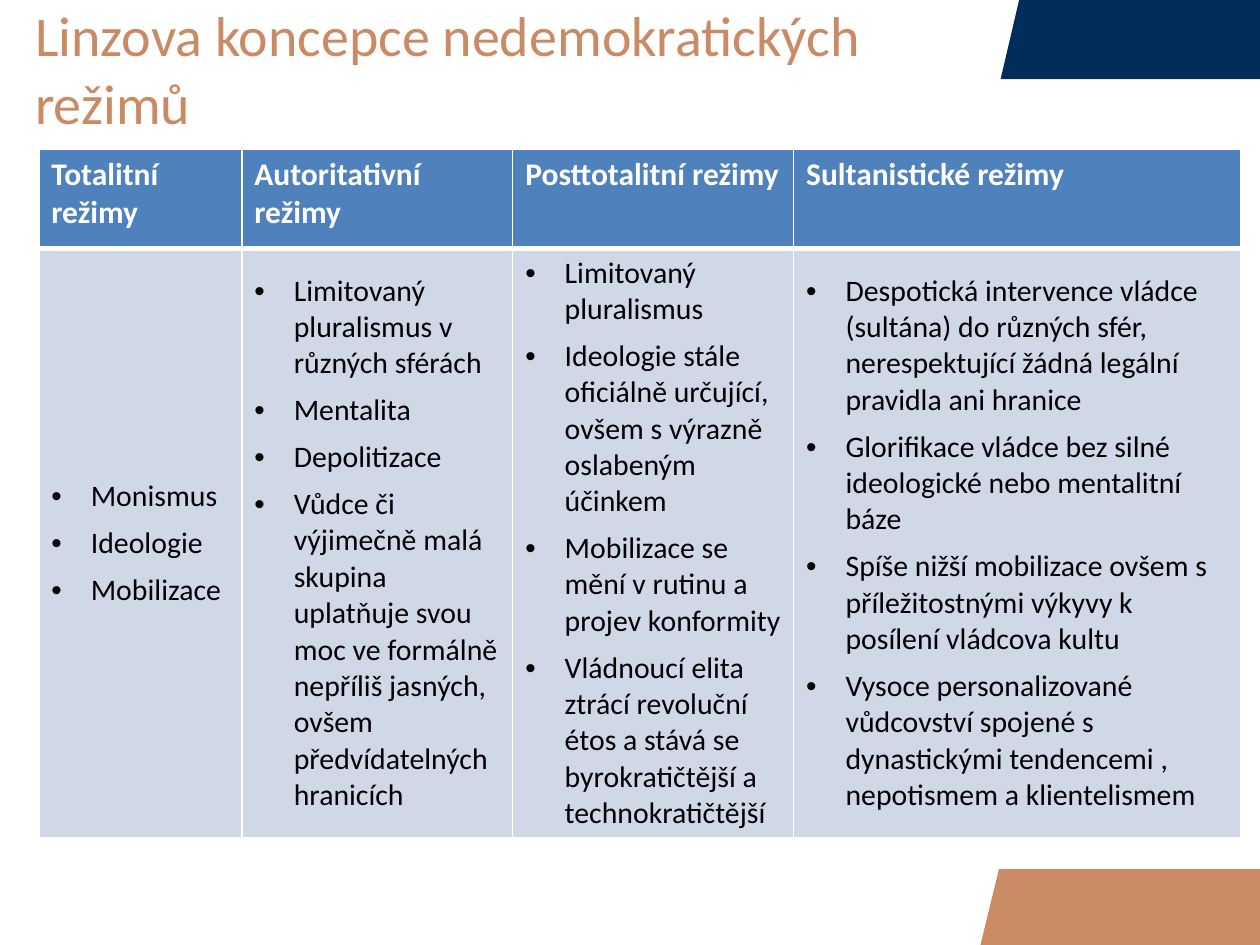
from lxml import etree
from pptx import Presentation
from pptx.dml.color import RGBColor
from pptx.enum.text import MSO_ANCHOR, PP_ALIGN
from pptx.oxml.ns import qn
from pptx.util import Pt

LEFT = PP_ALIGN.LEFT
TOP = MSO_ANCHOR.TOP
MIDDLE = MSO_ANCHOR.MIDDLE
FONT = "Calibri"
TITLE_ONLY = 5
COLORS = {
    "navy": "002D5A",
    "copper": "CA8A64",
    "header": "4F81BD",
    "body": "D0D8E8",
    "white": "FFFFFF",
    "black": "000000",
}
WIDTH, HEIGHT = 720, 540
COLUMN_WIDTHS = [116, 154.8, 160.5, 255.6]
ROW_HEIGHTS = [56.7, 333.7]
BULLET_INDENT = 22.5
REGIMES = {
    "Totalitní režimy": ["Monismus", "Ideologie", "Mobilizace"],
    "Autoritativní režimy": [
        "Limitovaný pluralismus v různých sférách",
        "Mentalita",
        "Depolitizace",
        "Vůdce či výjimečně malá skupina uplatňuje svou moc ve formálně "
        "nepříliš jasných, ovšem předvídatelných hranicích",
    ],
    "Posttotalitní režimy": [
        "Limitovaný pluralismus",
        "Ideologie stále oficiálně určující, ovšem s výrazně oslabeným účinkem",
        "Mobilizace se mění v rutinu a projev konformity",
        "Vládnoucí elita ztrácí revoluční étos a stává se byrokratičtější "
        "a technokratičtější",
    ],
    "Sultanistické režimy": [
        "Despotická intervence vládce (sultána) do různých sfér, "
        "nerespektující žádná legální pravidla ani hranice",
        "Glorifikace vládce bez silné ideologické nebo mentalitní báze",
        "Spíše nižší mobilizace ovšem s příležitostnými výkyvy k posílení "
        "vládcova kultu",
        "Vysoce personalizované vůdcovství spojené s dynastickými tendencemi , "
        "nepotismem a klientelismem",
    ],
}


def color(name):
    return RGBColor.from_string(COLORS[name])


def format_font(paragraph, size, color_name, bold=False):
    font = paragraph.font
    font.name = FONT
    font.size = Pt(size)
    font.bold = bold
    font.color.rgb = color(color_name)


def add_corner(slide, left, top, height, slant, color_name):
    bottom = top + height
    builder = slide.shapes.build_freeform(Pt(left), Pt(bottom))
    points = [(left + slant, top), (WIDTH, top), (WIDTH, bottom)]
    builder.add_line_segments([(Pt(x), Pt(y)) for x, y in points])
    shape = builder.convert_to_shape()
    shape.shadow.inherit = False
    shape.fill.solid()
    shape.fill.fore_color.rgb = color(color_name)
    shape.line.fill.background()


def set_title(slide, text):
    title = slide.shapes.title
    title.left, title.top = Pt(0), Pt(0)
    title.width, title.height = Pt(WIDTH), Pt(77.8)
    frame = title.text_frame
    frame.margin_left = frame.margin_right = Pt(20)
    frame.margin_top = frame.margin_bottom = Pt(3.6)
    frame.vertical_anchor = MIDDLE
    frame.text = text
    paragraph = frame.paragraphs[0]
    paragraph.alignment = LEFT
    format_font(paragraph, 32, "copper")


def add_bullet(paragraph):
    properties = paragraph._p.get_or_add_pPr()
    properties.set("marL", str(Pt(BULLET_INDENT)))
    properties.set("indent", str(-Pt(BULLET_INDENT)))
    etree.SubElement(properties, qn("a:buFont")).set("typeface", "Arial")
    etree.SubElement(properties, qn("a:buChar")).set("char", "•")


def set_borders(cell, **widths):
    properties = cell._tc.get_or_add_tcPr()
    for side in "LRTB":
        line = etree.SubElement(properties, qn(f"a:ln{side}"))
        line.set("w", str(Pt(widths.get(side, 1))))
        fill = etree.SubElement(line, qn("a:solidFill"))
        etree.SubElement(fill, qn("a:srgbClr")).set("val", COLORS["white"])


def set_fill(cell, color_name):
    cell.fill.solid()
    cell.fill.fore_color.rgb = color(color_name)


def fill_header(cell, text):
    set_borders(cell, B=3)
    set_fill(cell, "header")
    cell.vertical_anchor = TOP
    cell.text = text
    format_font(cell.text_frame.paragraphs[0], 18, "white", bold=True)


def fill_list(cell, items):
    set_borders(cell, T=3)
    set_fill(cell, "body")
    cell.vertical_anchor = MIDDLE
    cell.text = "\n".join(items)
    for index, paragraph in enumerate(cell.text_frame.paragraphs):
        add_bullet(paragraph)
        paragraph.space_before = Pt(6 if index else 0)
        format_font(paragraph, 17, "black")


def add_regime_table(slide):
    table = slide.shapes.add_table(
        len(ROW_HEIGHTS), len(COLUMN_WIDTHS), Pt(22.2), Pt(85.2),
        Pt(sum(COLUMN_WIDTHS)), Pt(sum(ROW_HEIGHTS)),
    ).table
    for row, height in zip(table.rows, ROW_HEIGHTS):
        row.height = Pt(height)
    for index, (heading, items) in enumerate(REGIMES.items()):
        table.columns[index].width = Pt(COLUMN_WIDTHS[index])
        fill_header(table.cell(0, index), heading)
        fill_list(table.cell(1, index), items)


def main():
    presentation = Presentation()
    presentation.slide_width = Pt(WIDTH)
    presentation.slide_height = Pt(HEIGHT)
    slide = presentation.slides.add_slide(presentation.slide_layouts[TITLE_ONLY])
    add_corner(slide, 571.8, 0, 45.2, 10.6, "navy")
    add_corner(slide, 560.3, 496.6, 43.4, 10.6, "copper")
    set_title(slide, "Linzova koncepce nedemokratických\vrežimů")
    add_regime_table(slide)
    presentation.save("out.pptx")


if __name__ == "__main__":
    main()
